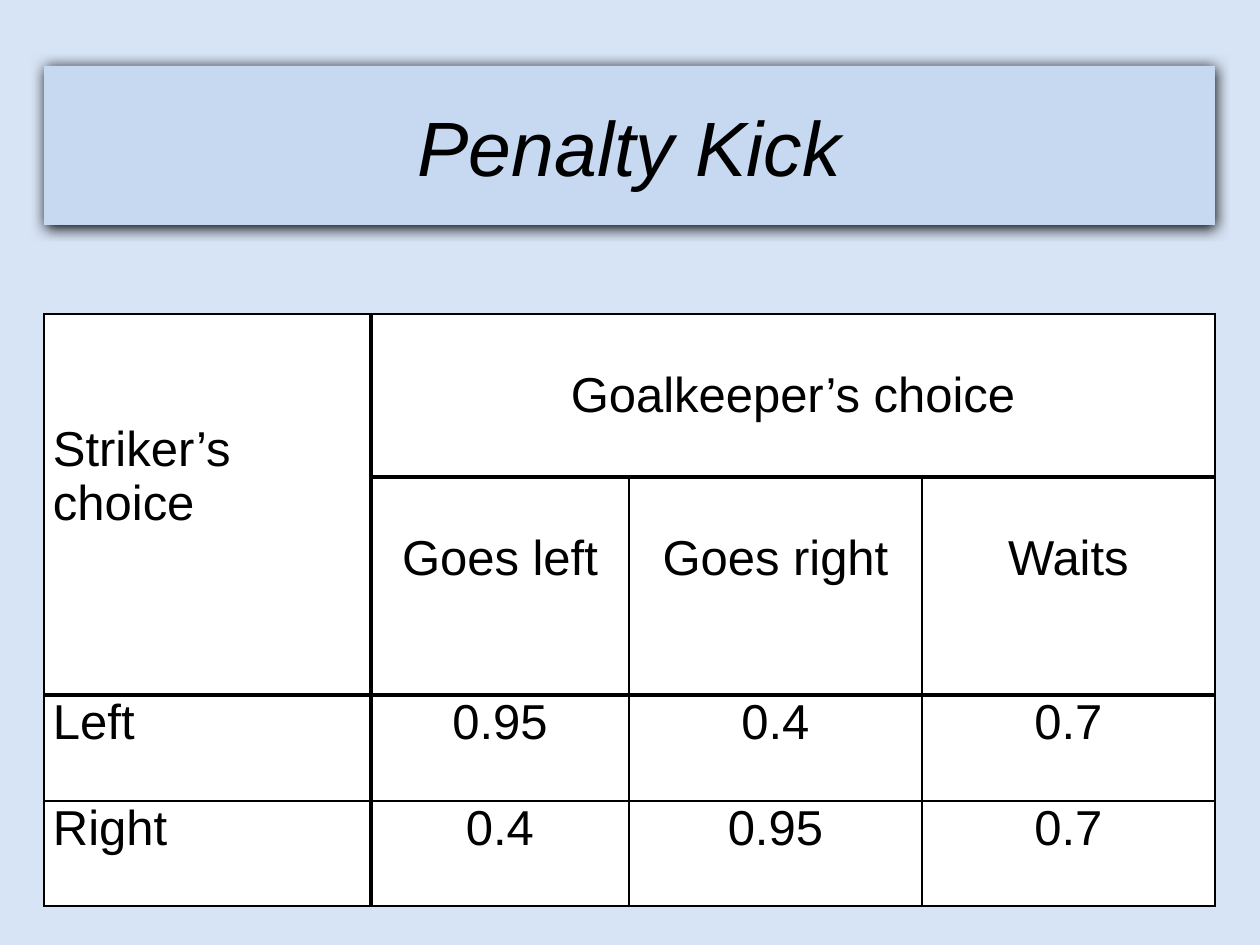
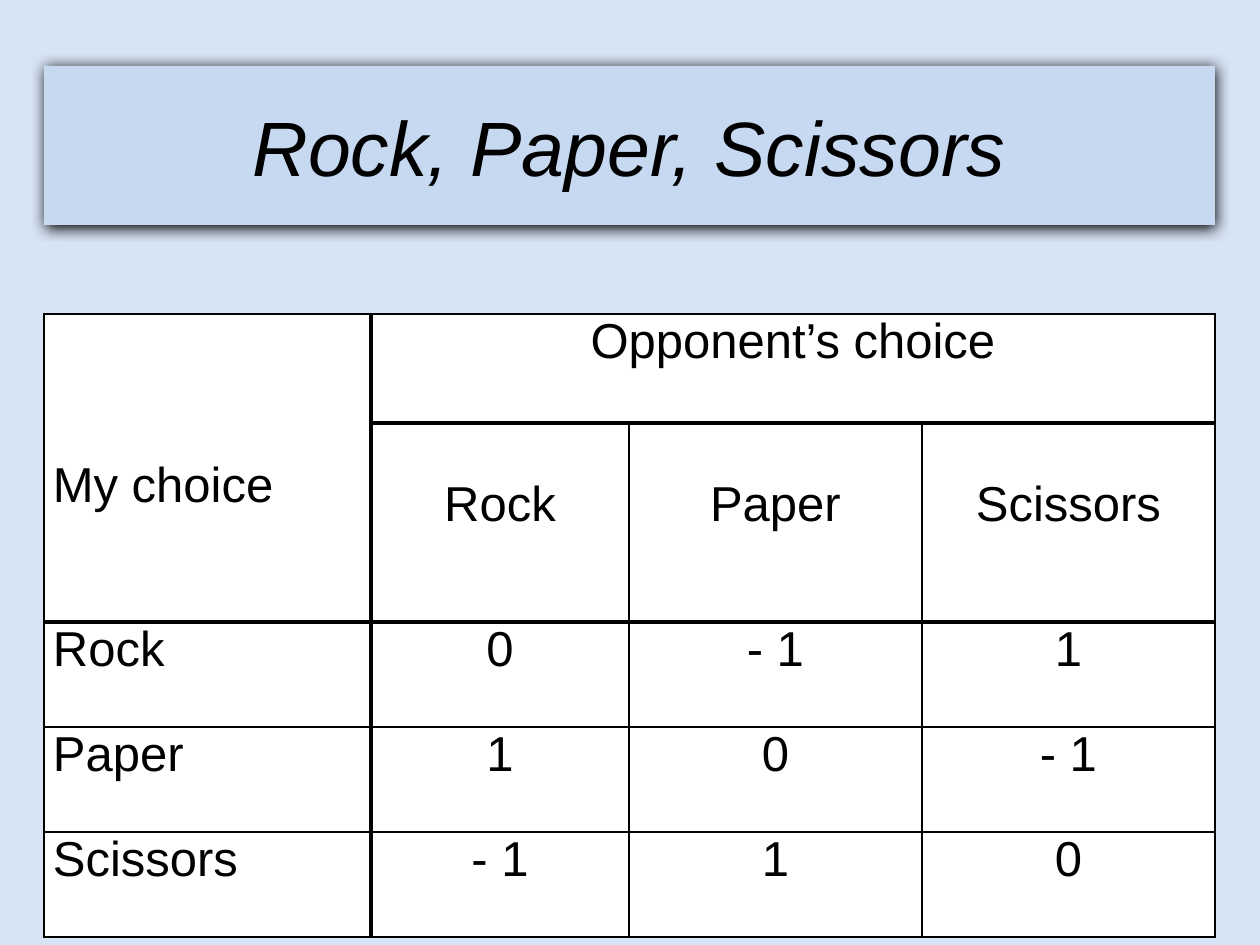
import lxml.etree
import pptx
import pptx.dml.color
import pptx.enum.text
import pptx.oxml
import pptx.oxml.ns
import pptx.util

PX = 914400 / 126
FONT = "Arial"
INK, PAPER, BAND, BACKDROP = "000000", "FFFFFF", "C6D9F1", "D7E4F5"
TITLE_BOX = (44, 66, 1171, 159)
TABLE_POS = (44, 314)
COLUMNS = (327, 258, 293, 293)
HEADER_ROWS = 2
CELL_INSET = 9
LINE = 54  # height of one line of table text
THIN, THICK = 1, 3
ALIGN = pptx.enum.text.PP_ALIGN


def px(n):
    return pptx.util.Emu(round(n * PX))


def color(value):
    return pptx.dml.color.RGBColor.from_string(value)


def set_fill(fill, value):
    fill.solid()
    fill.fore_color.rgb = color(value)


def write(tf, text, size=28, italic=False, align=ALIGN.CENTER):
    p = tf.paragraphs[0]
    p.alignment = align
    r = p.add_run()
    r.text = text
    r.font.name = FONT
    r.font.size = pptx.util.Pt(size)
    r.font.italic = italic
    r.font.color.rgb = color(INK)


def add_shadow(sp, blur, distance):
    effects = lxml.etree.SubElement(sp._element.spPr, pptx.oxml.ns.qn("a:effectLst"))
    shadow = lxml.etree.SubElement(
        effects, pptx.oxml.ns.qn("a:outerShdw"),
        blurRad=str(pptx.util.Pt(blur)), dist=str(pptx.util.Pt(distance)),
        dir="5400000", rotWithShape="0")
    lxml.etree.SubElement(shadow, pptx.oxml.ns.qn("a:srgbClr"), val=INK)


def add_title(s, text, box):
    sp = s.shapes.title
    sp.left, sp.top, sp.width, sp.height = map(px, box)
    set_fill(sp.fill, BAND)
    add_shadow(sp, 8.5, 1)
    sp.text_frame.vertical_anchor = pptx.enum.text.MSO_ANCHOR.MIDDLE
    write(sp.text_frame, text, size=44, italic=True)


def set_borders(cell, row, col):
    """Rule the header rows and the label column off with thick lines."""
    thick = {"L": col == 1, "R": col == 0,
             "T": row in (1, HEADER_ROWS), "B": row < HEADER_ROWS}
    tcPr = cell._tc.get_or_add_tcPr()
    for i, (side, is_thick) in enumerate(thick.items()):
        width = pptx.util.Pt(THICK if is_thick else THIN)
        tcPr.insert(i, pptx.oxml.parse_xml(
            f'<a:ln{side} {pptx.oxml.ns.nsdecls("a")} w="{width}"><a:solidFill>'
            f'<a:srgbClr val="{INK}"/></a:solidFill></a:ln{side}>'))


def fill_cell(cell, text, drop=0, align=ALIGN.CENTER):
    cell.margin_top = px(drop)
    write(cell.text_frame, text, align=align)


def add_payoff_table(s, pos, heights, corner, header, options, payoffs,
                     corner_drop, header_drop):
    table = s.shapes.add_table(len(heights), len(COLUMNS), *map(px, pos),
                               px(sum(COLUMNS)), px(sum(heights))).table
    for column, width in zip(table.columns, COLUMNS):
        column.width = px(width)
    for row, height in zip(table.rows, heights):
        row.height = px(height)
    for i in range(len(heights)):
        for j in range(len(COLUMNS)):
            cell = table.cell(i, j)
            cell.margin_left = cell.margin_right = px(CELL_INSET)
            cell.margin_top = cell.margin_bottom = 0
            set_fill(cell.fill, PAPER)
            set_borders(cell, i, j)
    table.cell(0, 0).merge(table.cell(1, 0))
    table.cell(0, 1).merge(table.cell(0, 3))

    fill_cell(table.cell(0, 0), corner, corner_drop, ALIGN.LEFT)
    fill_cell(table.cell(0, 1), header, header_drop)
    for j, option in enumerate(options, 1):
        fill_cell(table.cell(1, j), option, LINE)
    for i, (label, *values) in enumerate(payoffs, HEADER_ROWS):
        fill_cell(table.cell(i, 0), label, align=ALIGN.LEFT)
        for j, value in enumerate(values, 1):
            fill_cell(table.cell(i, j), value)


def add_game_slide(prs, title, **game):
    s = prs.slides.add_slide(prs.slide_layouts.get_by_name("Title Only"))
    add_title(s, title, TITLE_BOX)
    add_payoff_table(s, TABLE_POS, **game)


def main():
    prs = pptx.Presentation()
    prs.slide_width, prs.slide_height = px(1260), px(945)
    set_fill(prs.slide_master.background.fill, BACKDROP)
    add_game_slide(
        prs, "Penalty Kick", heights=(163, 218, 106, 105),
        corner="Striker’s choice", corner_drop=2 * LINE,
        header="Goalkeeper’s choice", header_drop=LINE,
        options=("Goes left", "Goes right", "Waits"),
        payoffs=(("Left", "0.95", "0.4", "0.7"),
                 ("Right", "0.4", "0.95", "0.7")))
    add_game_slide(
        prs, "Rock, Paper, Scissors", heights=(109, 199, 105, 105, 105),
        corner="My choice", corner_drop=144,
        header="Opponent’s choice", header_drop=0,
        options=("Rock", "Paper", "Scissors"),
        payoffs=(("Rock", "0", "- 1", "1"),
                 ("Paper", "1", "0", "- 1"),
                 ("Scissors", "- 1", "1", "0")))
    prs.save("out.pptx")


if __name__ == "__main__":
    main()
